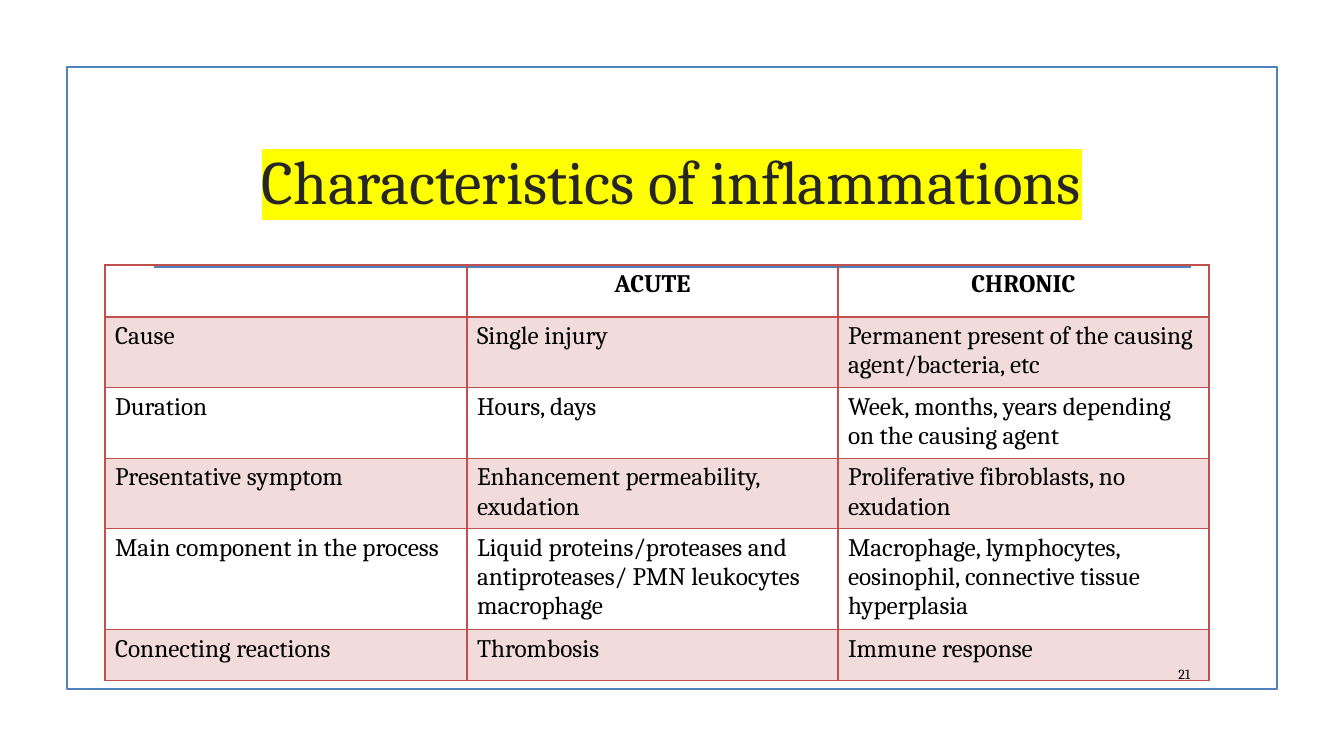
from lxml import etree
from pptx import Presentation
from pptx.dml.color import RGBColor
from pptx.enum.shapes import MSO_CONNECTOR, MSO_SHAPE
from pptx.enum.text import MSO_ANCHOR, PP_ALIGN
from pptx.oxml.ns import qn
from pptx.util import Pt

TITLE = "Characteristics of inflammations"
PAGE_NUMBER = "21"
HEADER = ("", "ACUTE", "CHRONIC")
CHARACTERISTICS = [
    ("Cause", "Single injury", "Permanent present of the causing agent/bacteria, etc"),
    ("Duration", "Hours, days", "Week, months, years depending on the causing agent"),
    ("Presentative symptom", "Enhancement permeability, exudation",
     "Proliferative fibroblasts, no exudation"),
    ("Main component in the process",
     "Liquid proteins/proteases and antiproteases/ PMN leukocytes macrophage",
     "Macrophage, lymphocytes, eosinophil, connective tissue hyperplasia"),
    ("Connecting reactions", "Thrombosis", "Immune response"),
]

COLORS = {"blue": "4F81BD", "red": "C0504D", "title": "262626",
          "text": "000000", "highlight": "FFFF00"}
FONT = "Cambria"
SLIDE_SIZE = (1344, 756)
FRAME = (67, 67, 1210, 622)
RULE = (154, 267, 1191, 267)
TITLE_BOX = (143, 108, 1058, 144)
NUMBER_BOX = (1141, 658, 59, 31)
TABLE_ORIGIN = (105, 265)
COLUMN_WIDTHS = (362, 371, 371)
ROW_HEIGHTS = (52, 68, 68, 68, 97, 51)
BAND_ALPHA = 20

LEFT, CENTER, RIGHT = PP_ALIGN.LEFT, PP_ALIGN.CENTER, PP_ALIGN.RIGHT
MIDDLE = MSO_ANCHOR.MIDDLE


def px(length):
    return round(length * 914400 / 100.8)


def scaled(lengths):
    return [px(length) for length in lengths]


def rgb(name):
    return RGBColor.from_string(COLORS[name])


def write(frame, text, size, color="text", bold=False, align=LEFT, highlight=None):
    paragraph = frame.paragraphs[0]
    paragraph.alignment = align
    run = paragraph.add_run()
    run.text = text
    run.font.size = Pt(size)
    run.font.bold = bold
    run.font.name = FONT
    run.font.color.rgb = rgb(color)
    if highlight:
        marker = etree.Element(qn("a:highlight"))
        etree.SubElement(marker, qn("a:srgbClr"), val=COLORS[highlight])
        run.font.fill._xPr.find(qn("a:solidFill")).addnext(marker)


def add_text(slide, box, text, **text_format):
    frame = slide.shapes.add_textbox(*scaled(box)).text_frame
    frame.word_wrap = True
    frame.vertical_anchor = MIDDLE
    write(frame, text, **text_format)


def add_border(cell, side, points):
    line = etree.SubElement(cell._tc.get_or_add_tcPr(), qn(f"a:ln{side}"),
                            w=str(Pt(points)))
    fill = etree.SubElement(line, qn("a:solidFill"))
    etree.SubElement(fill, qn("a:srgbClr"), val=COLORS["red"])


def fill_band(cell):
    cell.fill.solid()
    cell.fill.fore_color.rgb = rgb("red")
    color = cell._tc.tcPr.find(qn("a:solidFill"))[0]
    etree.SubElement(color, qn("a:alpha"), val=str(BAND_ALPHA * 1000))


def add_frame_and_rule(slide):
    frame = slide.shapes.add_shape(MSO_SHAPE.RECTANGLE, *scaled(FRAME))
    frame.shadow.inherit = False
    frame.fill.background()
    rule = slide.shapes.add_connector(MSO_CONNECTOR.STRAIGHT, *scaled(RULE))
    etree.SubElement(rule._element.spPr, qn("a:effectLst"))
    for outline in (frame.line, rule.line):
        outline.color.rgb = rgb("blue")
        outline.width = Pt(1.25)


def add_comparison(slide):
    rows = [HEADER, *CHARACTERISTICS]
    size = (sum(COLUMN_WIDTHS), sum(ROW_HEIGHTS))
    table = slide.shapes.add_table(len(rows), len(HEADER),
                                   *scaled(TABLE_ORIGIN + size)).table
    table.first_row = table.horz_banding = False
    for column, width in zip(table.columns, COLUMN_WIDTHS):
        column.width = px(width)
    for r, (texts, height) in enumerate(zip(rows, ROW_HEIGHTS)):
        table.rows[r].height = px(height)
        is_header = r == 0
        for c, text in enumerate(texts):
            cell = table.cell(r, c)
            for side in "LRTB":
                under_header = (r, side) in ((0, "B"), (1, "T"))
                add_border(cell, side, 2 if under_header else 1)
            if r % 2:
                fill_band(cell)
            else:
                cell.fill.background()
            write(cell.text_frame, text, size=18, bold=is_header,
                  align=CENTER if is_header else LEFT)


def main():
    presentation = Presentation()
    presentation.slide_width, presentation.slide_height = scaled(SLIDE_SIZE)
    slide = presentation.slides.add_slide(presentation.slide_layouts[6])
    add_frame_and_rule(slide)
    add_text(slide, TITLE_BOX, TITLE, size=44, color="title", align=CENTER,
             highlight="highlight")
    add_comparison(slide)
    add_text(slide, NUMBER_BOX, PAGE_NUMBER, size=10, align=RIGHT)
    presentation.save("out.pptx")


if __name__ == "__main__":
    main()
